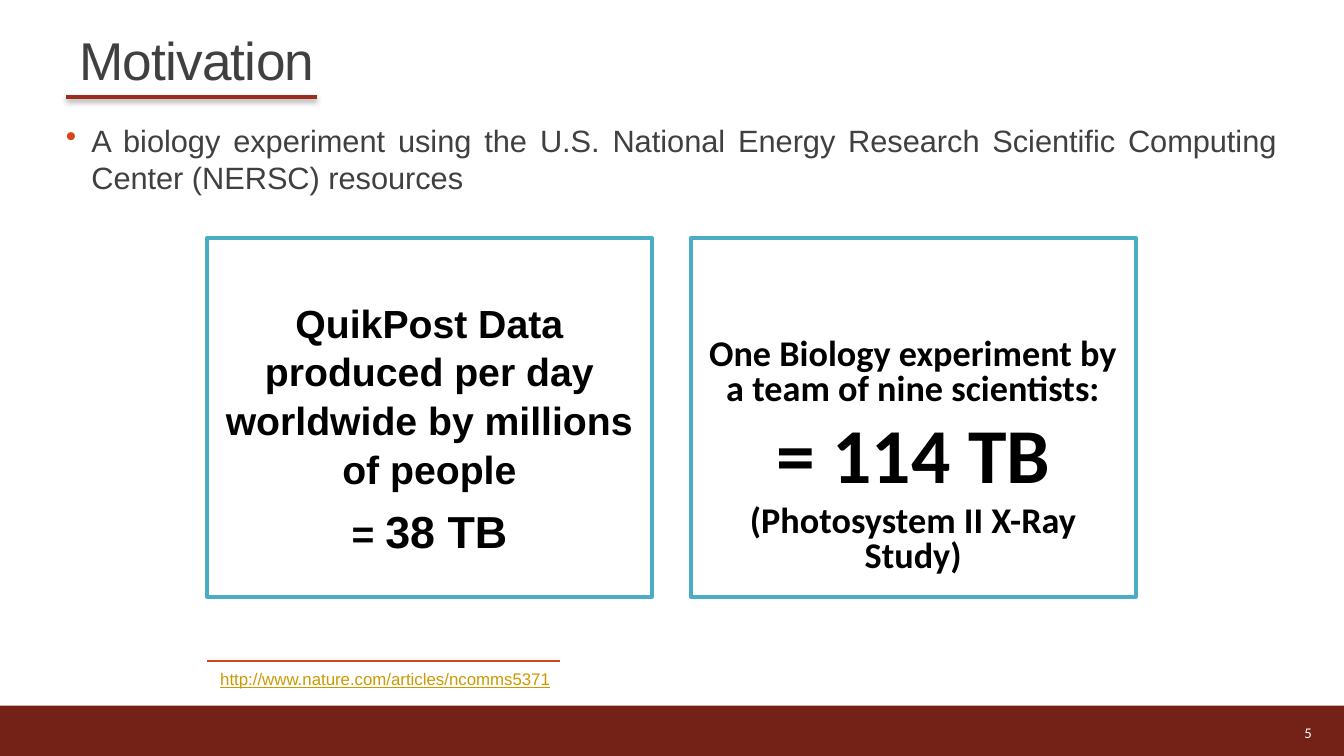
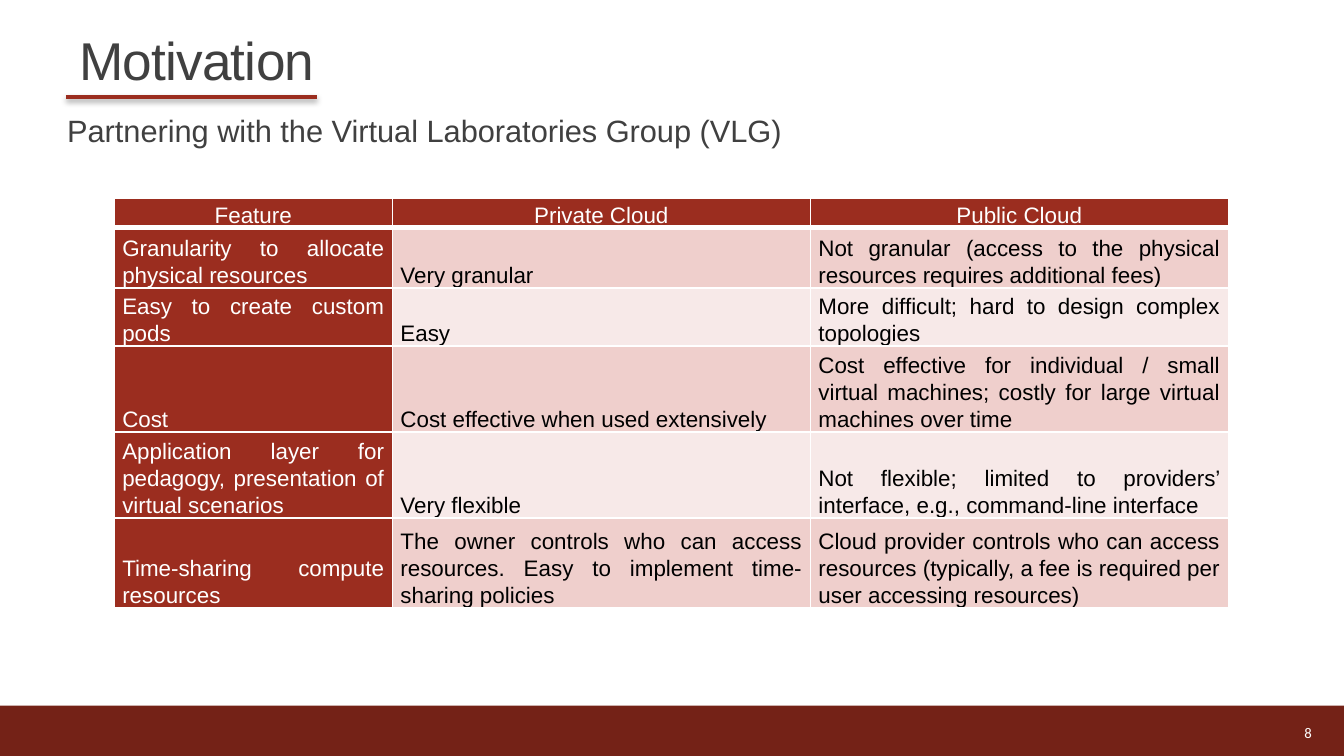
from typing import NamedTuple

from lxml.etree import SubElement
from pptx import Presentation
from pptx.dml.color import RGBColor
from pptx.enum.shapes import MSO_CONNECTOR as Connector, MSO_SHAPE as Preset
from pptx.enum.text import MSO_ANCHOR as Anchor, MSO_AUTO_SIZE as AutoSize, PP_ALIGN as Align
from pptx.oxml.ns import qn
from pptx.util import Inches, Pt

# Slide grid: 100 columns by 56.25 rows
SLIDE_W, SLIDE_H = Inches(10), Inches(5.625)
COL, ROW = SLIDE_W / 100, SLIDE_H / 56.25

WHITE = RGBColor(0xFF, 0xFF, 0xFF)
BLACK = RGBColor(0x00, 0x00, 0x00)
INK = RGBColor(0x40, 0x40, 0x40)
BRICK = RGBColor(0x9B, 0x2D, 0x1F)
MAROON = RGBColor(0x74, 0x22, 0x17)
ORANGE = RGBColor(0xD3, 0x48, 0x17)
TEAL = RGBColor(0x4B, 0xAC, 0xC6)
GOLD = RGBColor(0xCC, 0x99, 0x00)
ROSE = RGBColor(0xEF, 0xCF, 0xCC)
BLUSH = RGBColor(0xF7, 0xE9, 0xE8)


class Box(NamedTuple):
    """Left and width in columns, top and height in rows."""
    left: float
    top: float
    width: float
    height: float

    def place(self) -> tuple[int, int, int, int]:
        return (round(self.left * COL), round(self.top * ROW),
                round(self.width * COL), round(self.height * ROW))


class Run(NamedTuple):
    text: str
    size: float
    color: RGBColor = INK
    font: str = "Arial"
    bold: bool = False
    underline: bool = False


class Para(NamedTuple):
    runs: list[Run]
    layout: dict = {}
    bullet: bool = False


class Panel(NamedTuple):
    inset_rows: float
    paras: list[Para]


TITLE_BOX = Box(4.9, 0, 90.1, 7.3)
FOOTER_BAND = Box(0, 52.5, 100, 3.75)
NUMBER_BOX = Box(87.8, 53, 10.8, 3)
BODY_FRAME = dict(margin_left=0, margin_right=0)
BODY_LAYOUT = dict(alignment=Align.JUSTIFY, space_after=Pt(2.2))


def apply(target, values: dict) -> None:
    for name, value in values.items():
        setattr(target, name, value)


def write(frame, paras: list[Para], **frame_values) -> None:
    apply(frame, dict(word_wrap=True) | frame_values)
    for index, para in enumerate(paras):
        line = frame.paragraphs[0] if index == 0 else frame.add_paragraph()
        if para.bullet:
            props = line._p.get_or_add_pPr()
            props.set("marL", str(Inches(0.19)))
            props.set("indent", str(-Inches(0.19)))
            tint = SubElement(props, qn("a:buClr"))
            SubElement(tint, qn("a:srgbClr"), val=str(ORANGE))
            SubElement(props, qn("a:buChar"), char="•")
        apply(line, para.layout)
        for part in para.runs:
            run = line.add_run()
            run.text = part.text
            apply(run.font, dict(size=Pt(part.size), name=part.font,
                                 bold=part.bold, underline=part.underline))
            run.font.color.rgb = part.color


def add_text(slide, box: Box, paras: list[Para], **frame_values):
    label = slide.shapes.add_textbox(*box.place())
    write(label.text_frame, paras, **frame_values)
    return label


def add_rule(slide, left: float, right: float, row: float,
             color: RGBColor, weight: float, shadow: bool = False) -> None:
    y = round(row * ROW)
    rule = slide.shapes.add_connector(Connector.STRAIGHT, round(left * COL), y,
                                      round(right * COL), y)
    rule.line.color.rgb = color
    rule.line.width = Pt(weight)
    effects = SubElement(rule._element.spPr, qn("a:effectLst"))
    if shadow:
        cast = SubElement(effects, qn("a:outerShdw"), blurRad=str(Pt(3.1)),
                          dist=str(Pt(1.6)), dir="5400000", rotWithShape="0")
        tint = SubElement(cast, qn("a:srgbClr"), val=str(BLACK))
        SubElement(tint, qn("a:alpha"), val="38000")


def add_rect(slide, box: Box, fill: RGBColor | None = None,
             outline: RGBColor | None = None):
    rect = slide.shapes.add_shape(Preset.RECTANGLE, *box.place())
    rect.shadow.inherit = False
    if fill is None:
        rect.fill.background()
    else:
        rect.fill.solid()
        rect.fill.fore_color.rgb = fill
    if outline is None:
        rect.line.fill.background()
    else:
        rect.line.color.rgb = outline
        rect.line.width = Pt(2)
    return rect


def add_base(deck, number: str):
    """Slide with the shared footer band, title, underline and number."""
    slide = deck.slides.add_slide(deck.slide_layouts[6])
    add_rect(slide, FOOTER_BAND, MAROON)
    title = add_text(slide, TITLE_BOX,
                     [Para([Run("Motivation", 28.5)], dict(line_spacing=0.85))],
                     vertical_anchor=Anchor.BOTTOM)
    title.text_frame.paragraphs[0].runs[0].font._element.set("spc", "-40")
    add_rule(slide, 4.9, 23.6, 7.2, BRICK, 2, shadow=True)
    add_text(slide, NUMBER_BOX,
             [Para([Run(number, 7.9, WHITE, "Calibri")], dict(alignment=Align.RIGHT))],
             vertical_anchor=Anchor.MIDDLE)
    return slide


# Data comparison panels
def centred(spacing: float, before: float = 0) -> dict:
    return dict(alignment=Align.CENTER, line_spacing=spacing, space_before=Pt(before))


def strong(text: str, size: float, font: str = "Arial") -> Run:
    return Run(text, size, BLACK, font, bold=True)


PANEL = Box(15.4, 17.7, 33.1, 26.7)
PANEL_STEP = 36
PANELS = [
    Panel(4.4, [
        Para([strong("QuikPost Data produced per day worldwide by millions of people", 21)],
             centred(1.04)),
        Para([strong("= ", 21), strong("38 TB", 24)], centred(1.04, 4.8)),
    ]),
    Panel(7.5, [
        Para([strong("One Biology experiment by a team of nine scientists:", 19.4, "Calibri")],
             centred(0.8)),
        Para([strong("= 114 TB", 41.6, "Calibri")], centred(0.8, 8.3)),
        Para([strong("(Photosystem II X-Ray Study)", 19.4, "Calibri")], centred(0.8, 3.9)),
    ]),
]


def build_experiment(deck) -> None:
    slide = add_base(deck, "5")
    claim = ("A biology experiment using the U.S. National Energy Research "
             "Scientific Computing Center (NERSC) resources")
    add_text(slide, Box(4.9, 8.6, 90.1, 6), [Para([Run(claim, 16.5)], BODY_LAYOUT, True)],
             **BODY_FRAME)
    for index, panel in enumerate(PANELS):
        box = PANEL._replace(left=PANEL.left + index * PANEL_STEP)
        rect = add_rect(slide, box, outline=TEAL)
        write(rect.text_frame, panel.paras, vertical_anchor=Anchor.TOP,
              margin_top=round(panel.inset_rows * ROW))
    # Source reference
    address = Run("http://www.nature.com/articles/ncomms5371", 9, GOLD, underline=True)
    add_text(slide, Box(15.4, 49.3, 26.8, 2.5), [Para([address])],
             word_wrap=False, auto_size=AutoSize.SHAPE_TO_FIT_TEXT)
    add_rule(slide, 15.4, 41.7, 49.2, ORANGE, 1)


# Cloud comparison table
TABLE_BOX = Box(8.5, 14.75, 82.9, 30.1)
COLUMN_WIDTHS = [20.7, 31.1, 31.1]
ROW_HEIGHTS = [2.2, 4.5, 4.1, 6.3, 6.3, 6.7]
CLOUDS = [
    ("Feature", "Private Cloud", "Public Cloud"),
    ("Granularity to allocate physical resources", "Very granular",
     "Not granular (access to the physical resources requires additional fees)"),
    ("Easy to create custom pods", "Easy",
     "More difficult; hard to design complex topologies"),
    ("Cost", "Cost effective when used extensively",
     "Cost effective for individual / small virtual machines; "
     "costly for large virtual machines over time"),
    ("Application layer for pedagogy, presentation of virtual scenarios", "Very flexible",
     "Not flexible; limited to providers’ interface, e.g., command-line interface"),
    ("Time-sharing compute resources",
     "The owner controls who can access resources. "
     "Easy to implement time-sharing policies",
     "Cloud provider controls who can access resources "
     "(typically, a fee is required per user accessing resources)"),
]


def add_borders(cell, bottom: float) -> None:
    props = cell._tc.get_or_add_tcPr()
    for side, weight in dict(L=1, R=1, T=1, B=bottom).items():
        edge = SubElement(props, qn(f"a:ln{side}"), w=str(Pt(weight)))
        paint = SubElement(edge, qn("a:solidFill"))
        SubElement(paint, qn("a:srgbClr"), val=str(WHITE))


def build_clouds(deck) -> None:
    slide = add_base(deck, "8")
    add_text(slide, Box(5, 7.8, 90.1, 4),
             [Para([Run("Partnering with the Virtual Laboratories Group (VLG)", 16.5)],
                   BODY_LAYOUT)], **BODY_FRAME)
    table = slide.shapes.add_table(len(CLOUDS), len(COLUMN_WIDTHS), *TABLE_BOX.place()).table
    for column, width in zip(table.columns, COLUMN_WIDTHS):
        column.width = round(width * COL)
    for row, height in zip(table.rows, ROW_HEIGHTS):
        row.height = round(height * ROW)
    for r, features in enumerate(CLOUDS):
        for c, text in enumerate(features):
            cell = table.cell(r, c)
            heading = r == 0 or c == 0
            add_borders(cell, bottom=3 if r == 0 else 1)
            apply(cell, dict(margin_left=Inches(0.06), margin_right=Inches(0.06),
                             margin_top=0, margin_bottom=0, vertical_anchor=Anchor.BOTTOM))
            cell.fill.solid()
            cell.fill.fore_color.rgb = BRICK if heading else ROSE if r % 2 else BLUSH
            layout = dict(alignment=Align.JUSTIFY if r else Align.CENTER, line_spacing=1.07)
            write(cell.text_frame,
                  [Para([Run(text, 12, WHITE if heading else BLACK)], layout)])


def main() -> None:
    deck = Presentation()
    apply(deck, dict(slide_width=SLIDE_W, slide_height=SLIDE_H))
    build_experiment(deck)
    build_clouds(deck)
    deck.save("out.pptx")


if __name__ == "__main__":
    main()
